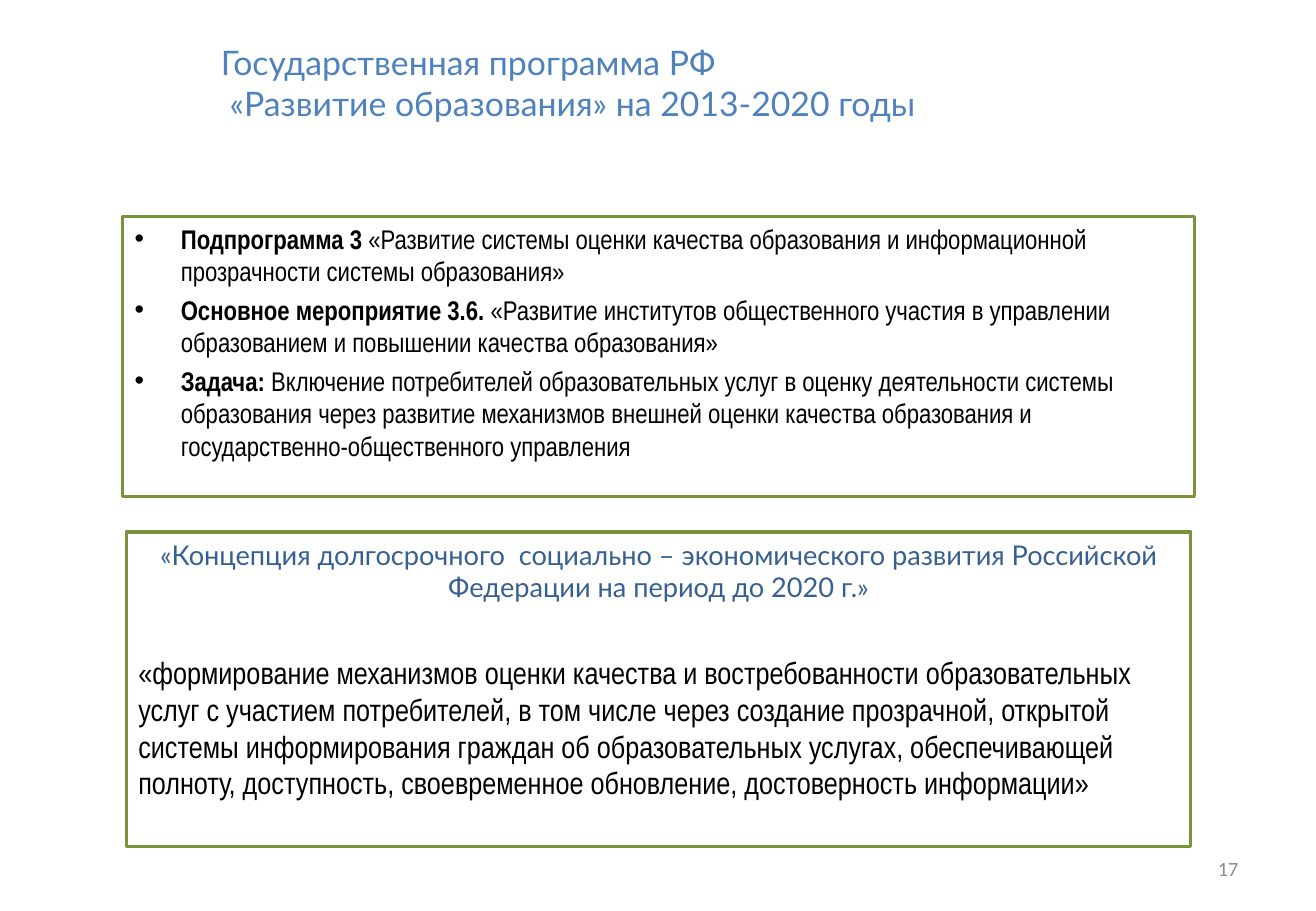
import pptx
import pptx.util
import pptx.dml.color
import pptx.enum.shapes
import pptx.enum.text
import pptx.oxml.ns
from lxml import etree
from pptx.util import Inches

COLORS = {
    "title": "4F81BD",
    "heading": "376092",
    "body": "000000",
    "number": "8C8C8C",
    "frame": "77933C",
    "paper": "FFFFFF",
}
ALIGN = pptx.enum.text.PP_ALIGN
ANCHOR = pptx.enum.text.MSO_ANCHOR

PROGRAM_POINTS = [
    ("Подпрограмма 3 ",
     "«Развитие системы оценки качества образования и информационной "
     "прозрачности системы образования»"),
    ("Основное мероприятие 3.6. ",
     "«Развитие институтов общественного участия в управлении "
     "образованием и повышении качества образования»"),
    ("Задача: ",
     "Включение потребителей образовательных услуг в оценку деятельности "
     "системы образования через развитие механизмов внешней оценки качества "
     "образования и государственно-общественного управления"),
]
CONCEPT_HEADING = (
    "«Концепция долгосрочного  социально – экономического развития "
    "Российской Федерации на период до 2020 г.»"
)
CONCEPT_QUOTE = (
    "«формирование механизмов оценки качества и востребованности "
    "образовательных услуг с участием потребителей, в том числе через "
    "создание прозрачной, открытой системы информирования граждан об "
    "образовательных услугах, обеспечивающей полноту, доступность, "
    "своевременное обновление, достоверность информации»"
)


def rgb(name):
    """Return the named colour of the palette."""
    return pptx.dml.color.RGBColor.from_string(COLORS[name])


def add_bullet(paragraph):
    """Give the paragraph a hanging round bullet."""
    properties = paragraph._p.get_or_add_pPr()
    properties.set("marL", str(Inches(0.38)))
    properties.set("indent", str(Inches(-0.38)))
    qn = pptx.oxml.ns.qn
    etree.SubElement(properties, qn("a:buFont")).set("typeface", "Arial")
    etree.SubElement(properties, qn("a:buChar")).set("char", "•")


def write(frame, text, *, lead="", font, size, color, align=ALIGN.LEFT,
          before=0, bullet=False):
    """Write one paragraph, with an optional bold lead, into a text frame."""
    paragraph = frame.paragraphs[0]
    if paragraph.runs:
        paragraph = frame.add_paragraph()
        paragraph.space_before = pptx.util.Pt(before)
    paragraph.alignment = align
    if bullet:
        add_bullet(paragraph)
    for part, bold in ((lead, True), (text, False)):
        for index, line in enumerate(part.split("\n") if part else []):
            if index:
                paragraph.add_line_break()
            run = paragraph.add_run()
            run.text = line
            run.font.name = font
            run.font.size = pptx.util.Pt(size)
            run.font.bold = bold
            run.font.color.rgb = rgb(color)


def add_label(slide, left, top, width, height):
    """Add a wrapped, vertically centred text box and return its frame."""
    frame = slide.shapes.add_textbox(
        Inches(left), Inches(top), Inches(width), Inches(height)).text_frame
    frame.word_wrap = True
    frame.vertical_anchor = ANCHOR.MIDDLE
    return frame


def add_panel(slide, left, top, width, height):
    """Add a green-framed panel and return its text frame."""
    panel = slide.shapes.add_shape(
        pptx.enum.shapes.MSO_SHAPE.RECTANGLE,
        Inches(left), Inches(top), Inches(width), Inches(height))
    panel.shadow.inherit = False
    panel.fill.solid()
    panel.fill.fore_color.rgb = rgb("paper")
    panel.line.color.rgb = rgb("frame")
    panel.line.width = pptx.util.Pt(2)
    panel.text_frame.word_wrap = True
    panel.text_frame.vertical_anchor = ANCHOR.TOP
    return panel.text_frame


def main():
    """Build the slide and save it."""
    deck = pptx.Presentation()
    deck.slide_width = Inches(10.83)
    deck.slide_height = Inches(7.5)
    slide = deck.slides.add_slide(deck.slide_layouts[6])

    program = add_panel(slide, 1.01, 1.78, 8.82, 2.31)
    for lead, text in PROGRAM_POINTS:
        write(program, text, lead=lead, font="Arial Narrow", size=16,
              color="body", before=3.8, bullet=True)

    concept = add_panel(slide, 1.04, 4.38, 8.76, 2.59)
    write(concept, CONCEPT_HEADING, font="Lato", size=16.1,
          color="heading", align=ALIGN.CENTER)
    write(concept, CONCEPT_QUOTE, font="Arial Narrow", size=18.2,
          color="body", before=30)

    title = add_label(slide, 1.72, 0.21, 8.43, 0.94)
    write(title, "Государственная программа РФ\n"
          " «Развитие образования» на 2013-2020 годы",
          font="Lato", size=20, color="title")

    number = add_label(slide, 7.76, 6.95, 2.53, 0.4)
    write(number, "17", font="Calibri", size=12, color="number",
          align=ALIGN.RIGHT)

    deck.save("out.pptx")


if __name__ == "__main__":
    main()
